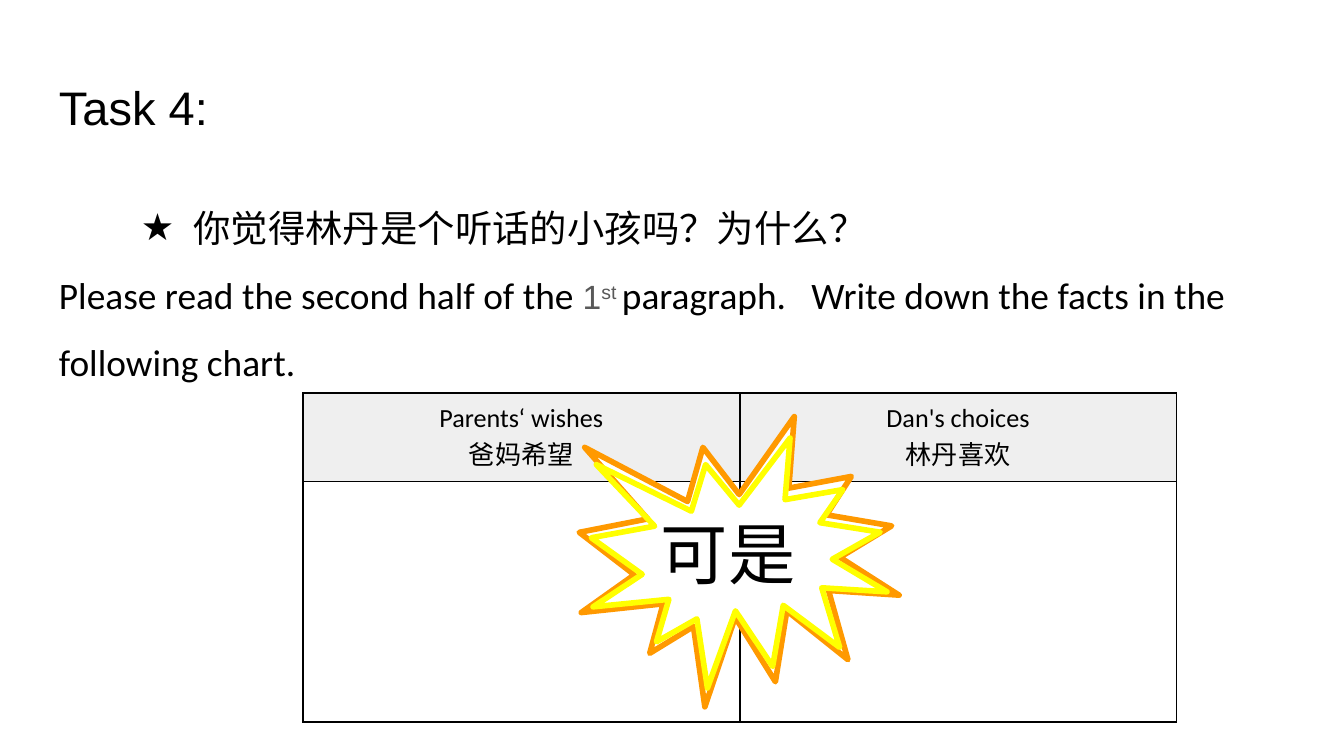
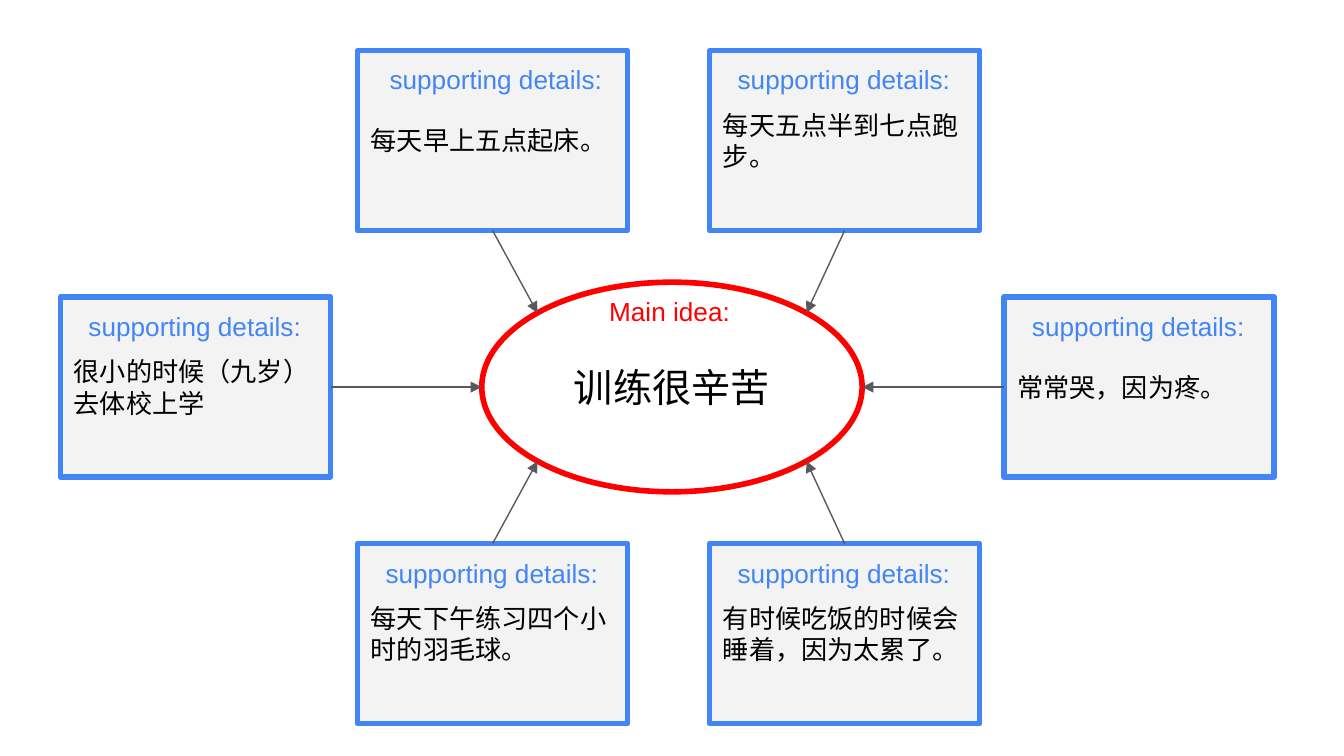
"""Build a reading task slide and an idea map slide."""
import math
from collections import namedtuple

from lxml import etree
from pptx import Presentation
from pptx import util as u
from pptx.dml.color import RGBColor
from pptx.enum import shapes, text
from pptx.oxml.ns import qn

COLORS = {
    "ink": "000000", "paper": "FFFFFF", "grey": "595959", "header": "EFEFEF",
    "card": "F3F3F3", "blue": "4285F4", "red": "FF0000",
    "orange": "FF9900", "yellow": "FFFF00",
}
COLUMNS, ROWS = 100, 56.25
CELL = u.Inches(0.1)
SHAPE = shapes.MSO_SHAPE
CENTER = text.PP_ALIGN.CENTER
TOP, LEFT, BOTTOM, RIGHT = range(4)

Box = namedtuple("Box", "col row width height")

DETAILS = [
    (4.5, 1, "很小的时候（九岁）去体校上学", RIGHT, 180, 1.1),
    (74.7, 1, "常常哭，因为疼。", LEFT, 0, 1.1),
    (52.8, 0, "每天五点半到七点跑步。", BOTTOM, 315, 1.1),
    (26.6, 2, "每天下午练习四个小时的羽毛球。", TOP, 135, 1.1),
    (26.6, 0, "每天早上五点起床。", BOTTOM, 225, 1.4),
    (52.8, 2, "有时候吃饭的时候会睡着，因为太累了。", TOP, 45, 1.1),
]


def grid(*cells):
    """Turn grid cells into lengths."""
    return [u.Emu(round(count * CELL)) for count in cells]


def rgb(name):
    """Return a named colour."""
    return RGBColor.from_string(COLORS[name])


def style(span, size, font="Arial", color="ink"):
    """Format one run."""
    span.font.size = u.Pt(size)
    span.font.name = font
    span.font.color.rgb = rgb(color)


def write(frame, words, size, font="Arial", color="ink", align=text.PP_ALIGN.LEFT,
          inset=1, wrap=True):
    """Fill a text frame and format all of its runs."""
    frame.text = words
    frame.word_wrap = wrap
    set_insets(frame, inset)
    for para in frame.paragraphs:
        para.alignment = align
        for span in para.runs:
            style(span, size, font, color)


def set_insets(holder, cells):
    """Give a frame or table cell equal margins."""
    for side in ("left", "top", "right", "bottom"):
        setattr(holder, f"margin_{side}", grid(cells)[0])


def add_text(page, box):
    """Add an empty text box and return its frame."""
    return page.shapes.add_textbox(*grid(*box)).text_frame


def add_outlined(parent, kind, box, line, fill=None):
    """Add a preset shape with a three point outline."""
    shape = parent.shapes.add_shape(kind, *grid(*box))
    shape.shadow.inherit = False
    if fill:
        shape.fill.solid()
        shape.fill.fore_color.rgb = rgb(fill)
    else:
        shape.fill.background()
    shape.line.color.rgb = rgb(line)
    shape.line.width = u.Pt(3)
    shape.text_frame.vertical_anchor = text.MSO_ANCHOR.MIDDLE
    return shape


def add_arrow(page, card, side, col, row):
    """Draw an arrow from the side of a card to a grid point."""
    arrow = page.shapes.add_connector(shapes.MSO_CONNECTOR.STRAIGHT, *grid(0, 0, col, row))
    arrow.begin_connect(card, side)
    arrow.line.color.rgb = rgb("grey")
    arrow.line.width = u.Pt(0.75)
    etree.SubElement(arrow.line._get_or_add_ln(), qn("a:tailEnd"), type="triangle")
    etree.SubElement(arrow._element.spPr, qn("a:effectLst"))


def add_star(para):
    """Give a paragraph a hanging star bullet."""
    props = para._p.get_or_add_pPr()
    props.set("marL", str(u.Inches(1)))
    props.set("indent", str(u.Inches(-0.39)))
    color = etree.SubElement(props, qn("a:buClr"))
    etree.SubElement(color, qn("a:srgbClr"), val=COLORS["ink"])
    etree.SubElement(props, qn("a:buFont"), typeface="Calibri")
    etree.SubElement(props, qn("a:buChar"), char="★")


def add_borders(cell):
    """Outline a table cell in one point lines."""
    props = cell._tc.get_or_add_tcPr()
    for index, edge in enumerate(("lnL", "lnR", "lnT", "lnB")):
        line = etree.Element(qn(f"a:{edge}"), w=str(u.Pt(1)))
        fill = etree.SubElement(line, qn("a:solidFill"))
        etree.SubElement(fill, qn("a:srgbClr"), val=COLORS["ink"])
        props.insert(index, line)


def instructions(page, box):
    """Write the question and the reading instructions."""
    frame = add_text(page, box)
    write(frame, "你觉得林丹是个听话的小孩吗？为什么？", 20, "Calibri")
    add_star(frame.paragraphs[0])
    task = frame.add_paragraph()
    for words, size, font, color in (
        ("Please read the second half of the ", 20, "Calibri", "ink"),
        ("1", 18, "Arial", "grey"),
        ("st ", 18, "Arial", "grey"),
        ("paragraph.   Write down the facts in the following chart.", 20, "Calibri", "ink"),
    ):
        span = task.add_run()
        span.text = words
        style(span, size, font, color)
    task.runs[2].font._element.set("baseline", "30000")
    for para in frame.paragraphs:
        para.line_spacing = 1.5


def wishes_table(page, box, header_height):
    """Draw the two column table for wishes and choices."""
    table = page.shapes.add_table(2, 2, *grid(*box)).table
    table.first_row = table.horz_banding = False
    table.rows[0].height, table.rows[1].height = grid(
        header_height, box.height - header_height)
    for cell, words in zip(table.rows[0].cells,
                           ("Parents‘ wishes\n爸妈希望", "Dan's choices\n林丹喜欢")):
        write(cell.text_frame, words, 14, "Calibri", align=CENTER)
        cell.fill.solid()
        cell.fill.fore_color.rgb = rgb("header")
    for cell in table.rows[1].cells:
        cell.fill.background()
    for cell in table.iter_cells():
        set_insets(cell, 0.7)
        add_borders(cell)


def burst(page, box):
    """Draw a double outlined burst around the key word."""
    group = page.shapes.add_group_shape()
    outer = add_outlined(group, SHAPE.EXPLOSION1, box, "orange", "paper")
    write(outer.text_frame, "可是", 36)
    inner = Box(box.col + 0.9, box.row + 1.6, box.width - 1.8, box.height - 3)
    add_outlined(group, SHAPE.EXPLOSION1, inner, "yellow")


def task_slide(page):
    """Lay out the reading task."""
    write(add_text(page, Box(3.4, 4.85, 93.2, 6.3)), "Task 4:", 25.2)
    instructions(page, Box(3.4, 12.6, 93.2, 17.7))
    wishes_table(page, Box(22.54, 29.24, 65, 24.5), 6.6)
    burst(page, Box(43.1, 31, 23.8, 21.6))


def detail_card(page, box, words, label_indent):
    """Draw one supporting detail with its label."""
    card = add_outlined(page, SHAPE.RECTANGLE, box, "blue", "card")
    write(card.text_frame, words, 14)
    label = Box(box.col + label_indent, box.row, 17.9, 4.4)
    write(add_text(page, label), "supporting details:", 14, color="blue", wrap=False)
    return card


def main_idea(page, box):
    """Draw the central ellipse with its label."""
    ellipse = add_outlined(page, SHAPE.OVAL, box, "red", "paper")
    write(ellipse.text_frame, "训练很辛苦", 21, align=CENTER)
    label = Box(box.col + 0.3 * box.width, box.row, 0.4 * box.width, 4.4)
    write(add_text(page, label), "Main idea:", 14, color="red", wrap=False)


def idea_map_slide(page):
    """Lay out the main idea and the details that point to it."""
    idea = Box(35.85, 21, 28.3, 15.6)
    main_idea(page, idea)
    for col, level, words, side, degrees, indent in DETAILS:
        card = detail_card(page, Box(col, 3.75 + 18.35 * level, 20.1, 13.4), words, indent)
        angle = math.radians(degrees)
        add_arrow(page, card, side,
                  idea.col + idea.width * (1 + math.cos(angle)) / 2,
                  idea.row + idea.height * (1 + math.sin(angle)) / 2)


def main():
    """Build and save the deck."""
    deck = Presentation()
    deck.slide_width, deck.slide_height = grid(COLUMNS, ROWS)
    for build in (task_slide, idea_map_slide):
        page = deck.slides.add_slide(deck.slide_layouts[6])
        page.background.fill.solid()
        page.background.fill.fore_color.rgb = rgb("paper")
        build(page)
    deck.save("out.pptx")


if __name__ == "__main__":
    main()
